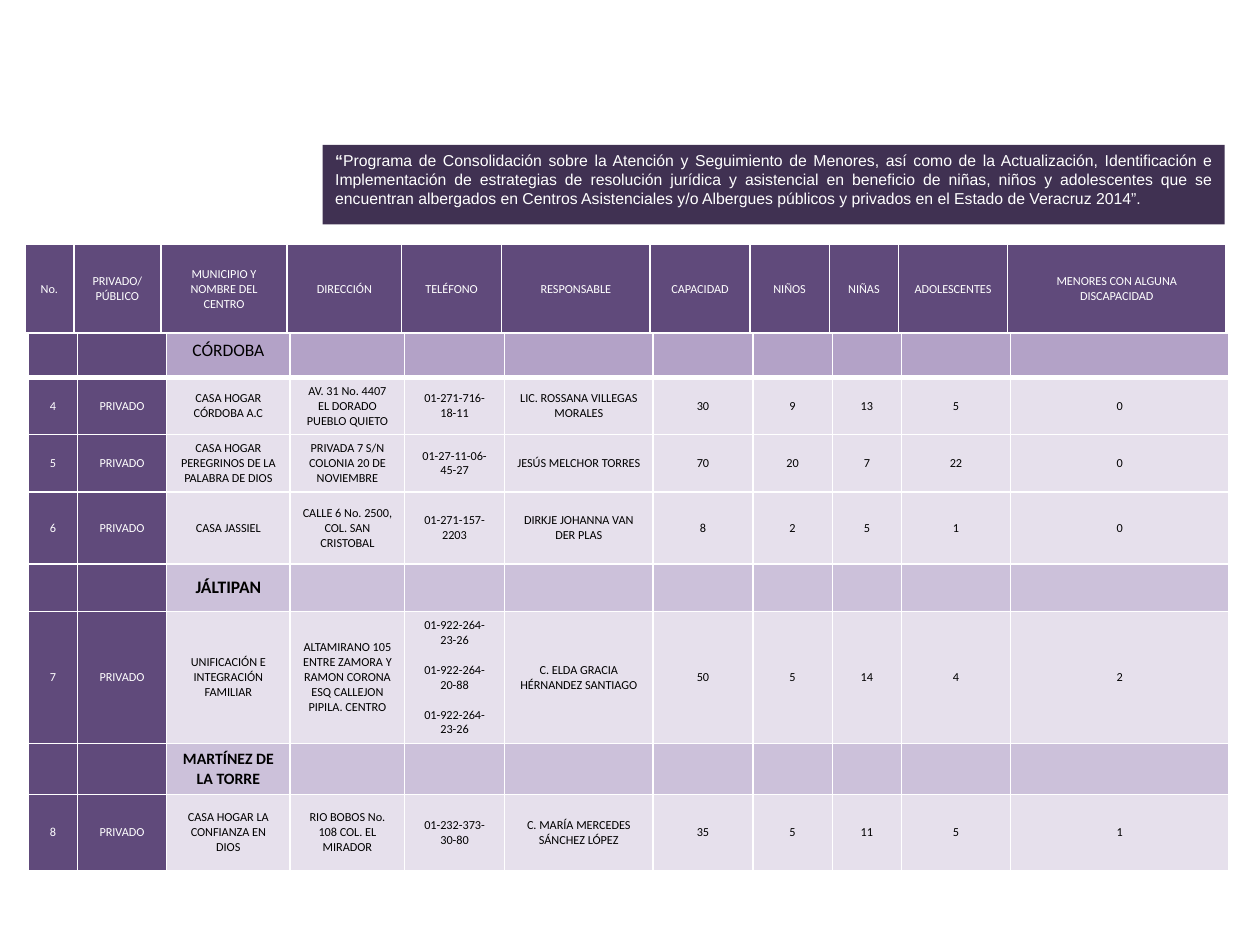
from dataclasses import dataclass

from lxml import etree
from pptx import Presentation
from pptx import util as u
from pptx.dml.color import RGBColor
from pptx.enum import text as t
from pptx.oxml import ns


@dataclass(frozen=True)
class Theme:
    banner: str = "403152"
    dark: str = "604A7B"
    first_group: str = "B3A2C7"
    group: str = "CCC1DA"
    light: str = "E6E0EC"
    white: str = "FFFFFF"
    black: str = "000000"
    title_font: str = "Arial"
    table_font: str = "Calibri"
    title_size: float = 9
    cell_size: float = 7
    group_size: float = 10
    thin_line: float = 1
    thick_line: float = 3


TITLE = (
    "Programa de Consolidación sobre la Atención y Seguimiento de Menores, así como de la "
    "Actualización, Identificación e Implementación de estrategias de resolución jurídica y "
    "asistencial en beneficio de niñas, niños y adolescentes que se encuentran albergados en "
    "Centros Asistenciales y/o Albergues públicos y privados en el Estado de Veracruz 2014”."
)
HEADINGS = [
    "No.", "PRIVADO/\nPÚBLICO", "MUNICIPIO Y NOMBRE DEL CENTRO", "DIRECCIÓN", "TELÉFONO",
    "RESPONSABLE", "CAPACIDAD", "NIÑOS", "NIÑAS", "ADOLESCENTES",
    "MENORES CON ALGUNA DISCAPACIDAD",
]
SHARED_WIDTHS = [65.5, 57, 85, 57, 45.4, 39.6, 62.2, 125]
HEADER_WIDTHS = [28, 49.7, 72.2] + SHARED_WIDTHS
CENTER_WIDTHS = [28, 51, 70.6] + SHARED_WIDTHS
ROW_HEIGHTS = [25, 32.7, 32.7, 41, 27.3, 57.6, 29, 43.7]
CENTERS = [
    ["CÓRDOBA"],
    ["4", "PRIVADO", "CASA HOGAR CÓRDOBA A.C", "AV. 31 No. 4407 EL DORADO PUEBLO QUIETO",
     "01-271-716-18-11", "LIC. ROSSANA VILLEGAS MORALES", "30", "9", "13", "5", "0"],
    ["5", "PRIVADO", "CASA HOGAR PEREGRINOS DE LA PALABRA DE DIOS",
     "PRIVADA 7 S/N COLONIA 20 DE NOVIEMBRE", "01-27-11-06-45-27",
     "JESÚS MELCHOR TORRES", "70", "20", "7", "22", "0"],
    ["6", "PRIVADO", "CASA JASSIEL", "CALLE 6 No. 2500, COL. SAN CRISTOBAL",
     "01-271-157-2203", "DIRKJE JOHANNA VAN DER PLAS", "8", "2", "5", "1", "0"],
    ["JÁLTIPAN"],
    ["7", "PRIVADO", "UNIFICACIÓN E INTEGRACIÓN FAMILIAR",
     "ALTAMIRANO 105 ENTRE ZAMORA Y RAMON CORONA ESQ CALLEJON PIPILA. CENTRO",
     "01-922-264-23-26\n01-922-264-20-88\n01-922-264-23-26",
     "C. ELDA GRACIA HÉRNANDEZ SANTIAGO", "50", "5", "14", "4", "2"],
    ["MARTÍNEZ DE LA TORRE"],
    ["8", "PRIVADO", "CASA HOGAR LA CONFIANZA EN DIOS", "RIO BOBOS No. 108 COL. EL MIRADOR",
     "01-232-373-30-80", "C. MARÍA MERCEDES SÁNCHEZ LÓPEZ", "35", "5", "11", "5", "1"],
]


def add_run(paragraph, content, *, font, size, color, bold=False):
    run = paragraph.add_run()
    run.text = content
    run.font.name = font
    run.font.size = u.Pt(size)
    run.font.bold = bold
    run.font.color.rgb = RGBColor.from_string(color)


def write(frame, content, *, gap=0, **style):
    """Write one centred paragraph per line, with gap points between them."""
    for index, line in enumerate(content.split("\n")):
        paragraph = frame.add_paragraph() if index else frame.paragraphs[0]
        paragraph.alignment = t.PP_ALIGN.CENTER
        if index and gap:
            paragraph.space_before = u.Pt(gap)
        if line:
            add_run(paragraph, line, **style)
        else:
            # An empty cell needs a small type size to keep its row low.
            etree.SubElement(paragraph._p, ns.qn("a:endParaRPr"), sz=str(int(style["size"] * 100)))


def set_borders(cell, color, widths):
    properties = cell._tc.get_or_add_tcPr()
    for side, width in widths.items():
        line = etree.SubElement(properties, ns.qn(f"a:ln{side}"), w=str(u.Pt(width)))
        fill = etree.SubElement(line, ns.qn("a:solidFill"))
        etree.SubElement(fill, ns.qn("a:srgbClr"), val=color)


class SlideBuilder:
    def __init__(self, slide, theme):
        self.slide = slide
        self.theme = theme

    def banner(self, left, top, width, height, content):
        theme = self.theme
        shape = self.slide.shapes.title
        shape.left, shape.top = u.Pt(left), u.Pt(top)
        shape.width, shape.height = u.Pt(width), u.Pt(height)
        shape.fill.solid()
        shape.fill.fore_color.rgb = RGBColor.from_string(theme.banner)
        frame = shape.text_frame
        frame.word_wrap = True
        frame.auto_size = t.MSO_AUTO_SIZE.NONE
        frame.vertical_anchor = t.MSO_ANCHOR.TOP
        paragraph = frame.paragraphs[0]
        paragraph.alignment = t.PP_ALIGN.JUSTIFY
        style = dict(font=theme.title_font, size=theme.title_size, color=theme.white)
        add_run(paragraph, "“", bold=True, **style)
        add_run(paragraph, content, **style)

    def table(self, left, top, widths, heights):
        table = self.slide.shapes.add_table(
            len(heights), len(widths), u.Pt(left), u.Pt(top),
            u.Pt(sum(widths)), u.Pt(sum(heights))).table
        table.first_row = table.horz_banding = False
        for column, width in zip(table.columns, widths):
            column.width = u.Pt(width)
        for row, height in zip(table.rows, heights):
            row.height = u.Pt(height)
        return table

    def cell(self, table, row, column, content, *, fill, color, size=None, bold=False,
             anchor=t.MSO_ANCHOR.MIDDLE):
        theme = self.theme
        cell = table.cell(row, column)
        bottom = theme.thin_line if row else theme.thick_line
        set_borders(cell, theme.white, dict(
            L=theme.thin_line, R=theme.thin_line, T=theme.thin_line, B=bottom))
        cell.fill.solid()
        cell.fill.fore_color.rgb = RGBColor.from_string(fill)
        cell.vertical_anchor = anchor
        # Several telephone numbers stand one line apart.
        gap = 8.5 if content.startswith("01-") else 0
        write(cell.text_frame, content, gap=gap, font=theme.table_font,
              size=size or theme.cell_size, color=color, bold=bold)

    def header_table(self, left, top):
        table = self.table(left, top, HEADER_WIDTHS, [51])
        for column, heading in enumerate(HEADINGS):
            self.cell(table, 0, column, heading, fill=self.theme.dark, color=self.theme.white)

    def center_table(self, left, top):
        theme = self.theme
        table = self.table(left, top, CENTER_WIDTHS, ROW_HEIGHTS)
        for row, values in enumerate(CENTERS):
            is_group = len(values) == 1
            fill = theme.light
            if is_group:
                fill = theme.group if row else theme.first_group
                values = ["", ""] + values + [""] * (len(CENTER_WIDTHS) - 3)
            for column, value in enumerate(values):
                style = dict(fill=fill, color=theme.black)
                if column < 2:
                    style = dict(fill=theme.dark, color=theme.white)
                elif is_group and value:
                    long_name = len(value) > 10
                    style.update(size=theme.group_size - long_name, bold=row > 0)
                    if row == 0:
                        style["anchor"] = t.MSO_ANCHOR.TOP
                self.cell(table, row, column, value, **style)


def main():
    presentation = Presentation()
    presentation.slide_width, presentation.slide_height = u.Pt(720), u.Pt(540)
    slide = presentation.slides.add_slide(presentation.slide_layouts[5])
    builder = SlideBuilder(slide, Theme())
    builder.header_table(14.2, 139.8)
    builder.center_table(16.2, 190.6)
    builder.banner(184.3, 82.8, 515.5, 45.4, TITLE)
    presentation.save("out.pptx")


if __name__ == "__main__":
    main()
